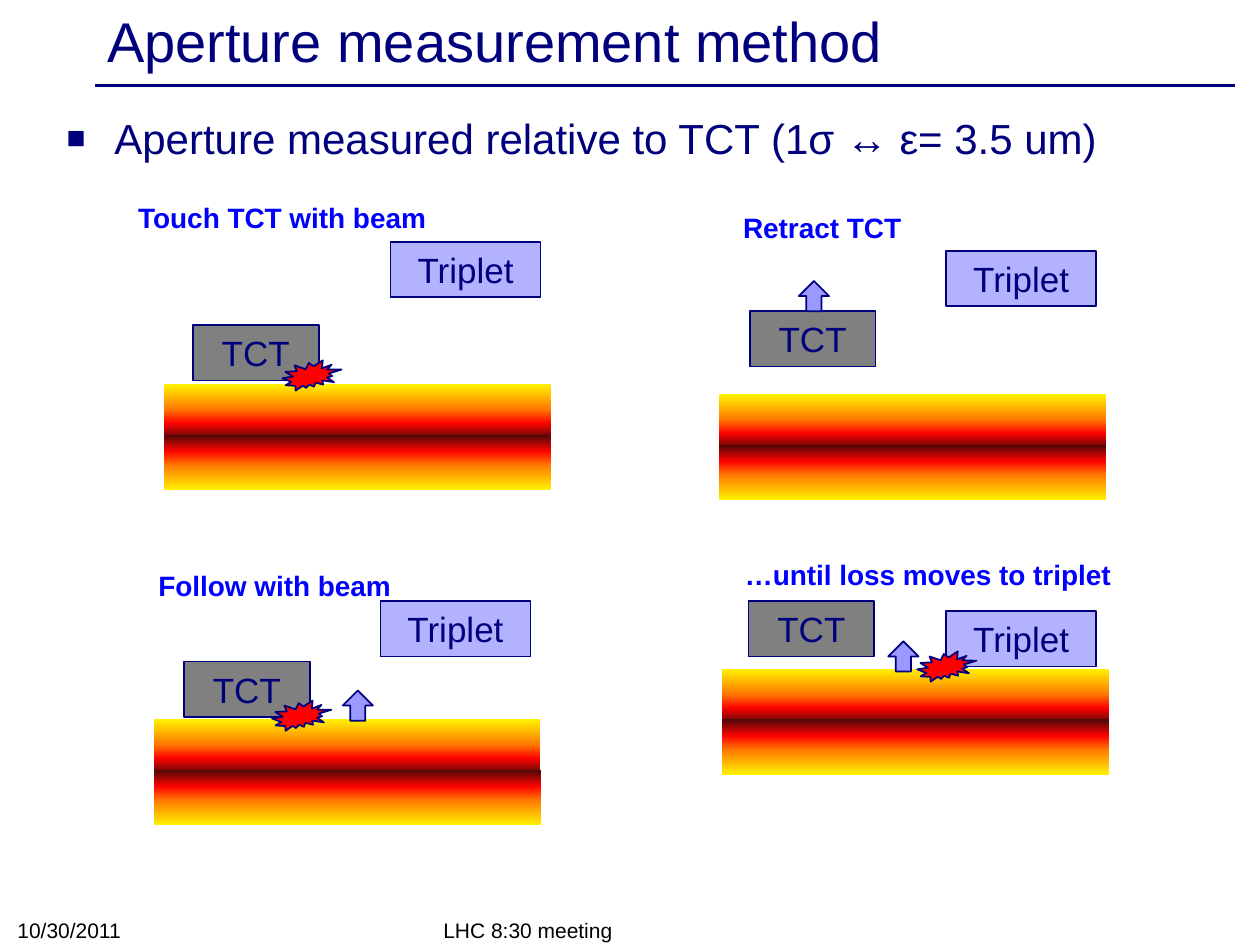
from dataclasses import dataclass

import pptx
import pptx.dml.color
import pptx.enum.shapes
import pptx.enum.text
import pptx.oxml
import pptx.oxml.ns
import pptx.util

Inches = pptx.util.Inches
Pt = pptx.util.Pt
Shape = pptx.enum.shapes.MSO_SHAPE
Align = pptx.enum.text.PP_ALIGN
Anchor = pptx.enum.text.MSO_ANCHOR
DRAWING = pptx.oxml.ns.nsdecls("a")


@dataclass(frozen=True)
class Theme:
    font: str = "Arial"
    navy: str = "00007D"
    caption: str = "0000FF"
    footer: str = "000000"
    collimator: str = "808080"
    triplet: str = "B2B2FF"
    arrow: str = "9999FF"
    loss: str = "FF0000"
    beam: tuple = ((0, "FFF200"), (45, "FF7A00"), (70, "FF0300"), (100, "4D0808"))
    title_size: int = 32
    body_size: int = 24
    label_size: int = 20
    caption_size: int = 16
    footer_size: int = 12


THEME = Theme()


@dataclass(frozen=True)
class Panel:
    """One step; part positions are offsets from the beam's top left corner."""
    caption: str
    caption_at: tuple
    caption_width: float
    beam_at: tuple
    tct: tuple
    triplet: tuple
    loss: tuple = None
    arrow: tuple = None


PANELS = [
    Panel("Touch TCT with beam", (-0.32, -1.51), 2.52, (1.3, 3.05),
          tct=(0.23, -0.47), triplet=(1.8, -1.13), loss=(0.94, -0.19)),
    Panel("Retract TCT", (0.08, -1.51), 1.47, (5.71, 3.13),
          tct=(0.24, -0.66), triplet=(1.8, -1.14), arrow=(0.63, -0.9)),
    Panel("Follow with beam", (-0.08, -1.25), 2.08, (1.22, 5.71),
          tct=(0.24, -0.46), triplet=(1.8, -0.94), loss=(0.94, -0.15),
          arrow=(1.5, -0.23)),
    Panel("…until loss moves to triplet", (0.06, -0.93), 3.15, (5.73, 5.31),
          tct=(0.21, -0.54), triplet=(1.78, -0.46), loss=(1.55, -0.14),
          arrow=(1.32, -0.22)),
]


def rgb(value):
    return pptx.dml.color.RGBColor.from_string(value)


def write_text(shape, text, size, color, anchor=Anchor.TOP, align=Align.LEFT,
               bold=False, wrap=True):
    frame = shape.text_frame
    frame.text = text
    frame.word_wrap = wrap
    frame.auto_size = pptx.enum.text.MSO_AUTO_SIZE.NONE
    frame.vertical_anchor = anchor
    paragraph = frame.paragraphs[0]
    paragraph.alignment = align
    for run in paragraph.runs:
        run.font.name = THEME.font
        run.font.size = Pt(size)
        run.font.bold = bold
        run.font.color.rgb = rgb(color)
    return paragraph


def add_text(slide, box, text, size, color, **options):
    shape = slide.shapes.add_textbox(*map(Inches, box))
    return write_text(shape, text, size, color, **options)


def add_part(slide, kind, box, fill):
    shape = slide.shapes.add_shape(kind, *map(Inches, box))
    shape.shadow.inherit = False
    shape.fill.solid()
    shape.fill.fore_color.rgb = rgb(fill)
    shape.line.color.rgb = rgb(THEME.navy)
    shape.line.width = Pt(1)
    return shape


def add_labelled_box(slide, box, text, fill):
    shape = add_part(slide, Shape.RECTANGLE, box, fill)
    write_text(shape, text, THEME.label_size, THEME.navy,
               anchor=Anchor.MIDDLE, align=Align.CENTER, wrap=False)


def add_beam(slide, left, top):
    """Two mirrored halves, darkest where they meet."""
    stops = "".join(
        f'<a:gs pos="{position * 1000}"><a:srgbClr val="{color}"/></a:gs>'
        for position, color in THEME.beam)
    for half in range(2):
        shape = slide.shapes.add_shape(
            Shape.RECTANGLE, Inches(left), Inches(top + 0.4 * half),
            Inches(3.07), Inches(0.44))
        shape.shadow.inherit = False
        shape.line.fill.background()
        shape.rotation = 180 * half
        gradient = pptx.oxml.parse_xml(
            f'<a:gradFill {DRAWING} rotWithShape="1"><a:gsLst>{stops}</a:gsLst>'
            '<a:lin ang="5400000" scaled="1"/></a:gradFill>')
        geometry = shape._element.spPr.find(pptx.oxml.ns.qn("a:prstGeom"))
        geometry.addnext(gradient)


def add_panel(slide, panel):
    left, top = panel.beam_at

    def place(offset, width, height):
        return left + offset[0], top + offset[1], width, height

    add_labelled_box(slide, place(panel.tct, 1, 0.44), "TCT", THEME.collimator)
    add_labelled_box(slide, place(panel.triplet, 1.19, 0.44), "Triplet", THEME.triplet)
    add_beam(slide, left, top)
    if panel.loss:
        add_part(slide, Shape.EXPLOSION2, place(panel.loss, 0.47, 0.24), THEME.loss)
    if panel.arrow:
        add_part(slide, Shape.UP_ARROW, place(panel.arrow, 0.24, 0.24), THEME.arrow)
    add_text(slide, place(panel.caption_at, panel.caption_width, 0.37), panel.caption,
             THEME.caption_size, THEME.caption, align=Align.CENTER, bold=True, wrap=False)


def add_header(slide, left, top, width, height):
    title = slide.shapes.title
    title.left, title.top, title.width, title.height = map(
        Inches, (left, top, width, height))
    write_text(title, "Aperture measurement method", THEME.title_size, THEME.navy,
               anchor=Anchor.MIDDLE)
    # Rule under the title
    rule_top = Inches(top + 0.65)
    rule = slide.shapes.add_connector(
        pptx.enum.shapes.MSO_CONNECTOR.STRAIGHT,
        Inches(left), rule_top, Inches(left + 9.05), rule_top)
    rule.line.color.rgb = rgb(THEME.navy)
    rule.line.width = Pt(2)
    rule._element.spPr.append(pptx.oxml.parse_xml(f"<a:effectLst {DRAWING}/>"))


def add_body(slide, box):
    paragraph = add_text(slide, box, "Aperture measured relative to TCT (1σ ↔ ε= 3.5 um)",
                         THEME.body_size, THEME.navy)
    properties = paragraph._p.get_or_add_pPr()
    properties.set("marL", str(Inches(0.38)))
    properties.set("indent", str(Inches(-0.38)))
    for bullet in (f'<a:buClr {DRAWING}><a:srgbClr val="{THEME.navy}"/></a:buClr>',
                   f'<a:buSzPct {DRAWING} val="75000"/>',
                   f'<a:buFont {DRAWING} typeface="{THEME.font}"/>',
                   f'<a:buChar {DRAWING} char="■"/>'):
        properties.append(pptx.oxml.parse_xml(bullet))


def add_footer(slide, box, text):
    add_text(slide, box, text, THEME.footer_size, THEME.footer, anchor=Anchor.BOTTOM)


def main():
    presentation = pptx.Presentation()
    presentation.slide_width = Inches(10)
    presentation.slide_height = Inches(7.5)
    slide = presentation.slides.add_slide(presentation.slide_layouts[5])

    add_header(slide, 0.75, 0.03, 9, 0.57)
    add_body(slide, (0.43, 0.84, 9, 1.18))
    for panel in PANELS:
        add_panel(slide, panel)
    add_footer(slide, (3.42, 7.25, 3.17, 0.28), "LHC 8:30 meeting")
    add_footer(slide, (0.04, 7.24, 2.33, 0.29), "10/30/2011")

    presentation.save("out.pptx")


if __name__ == "__main__":
    main()
